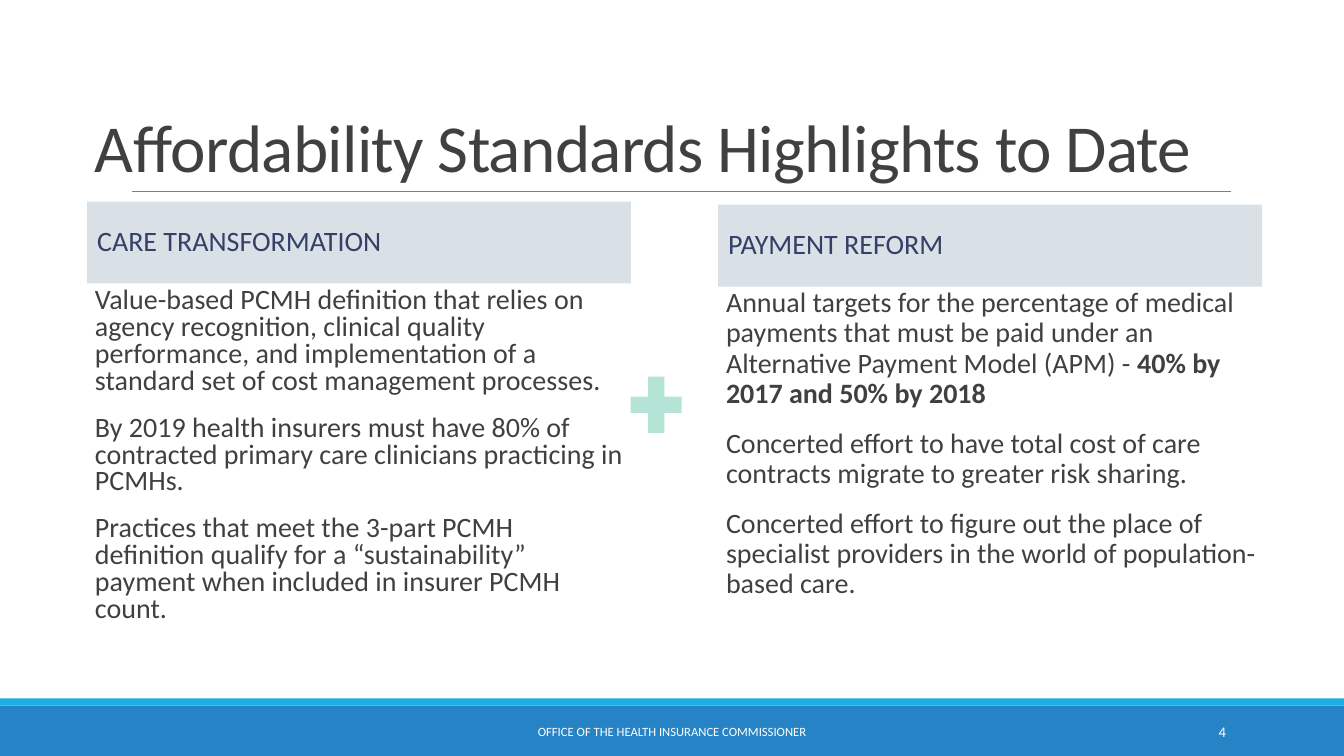
"""Build the slide on affordability standards: two headed columns joined by a plus."""
from dataclasses import dataclass

from lxml.etree import SubElement
from pptx import Presentation
from pptx.dml.color import RGBColor
from pptx.enum.shapes import MSO_CONNECTOR, MSO_SHAPE
from pptx.enum.text import MSO_ANCHOR, PP_ALIGN
from pptx.oxml.ns import qn
from pptx.shapes.autoshape import Shape
from pptx.slide import Slide
from pptx.util import Emu, Pt

PX = 9525
COLORS = {
    "footer": "2683C6", "strip": "1CADE4", "rule": "808080", "text": "404040",
    "heading": "344068", "heading_fill": "D9E0E6", "plus": "B3E4D6", "white": "FFFFFF",
}


@dataclass(frozen=True)
class Box:
    left: int
    top: int
    width: int
    height: int

    def emu(self) -> tuple[Emu, Emu, Emu, Emu]:
        return px(self.left), px(self.top), px(self.width), px(self.height)


@dataclass(frozen=True)
class Style:
    size: float
    color: str
    anchor: MSO_ANCHOR = MSO_ANCHOR.MIDDLE
    align: PP_ALIGN = PP_ALIGN.LEFT
    line: float = 1.0
    before: int = 0
    after: int = 0
    tracking: int = 0


@dataclass(frozen=True)
class Point:
    text: str
    emphasis: str = ""


@dataclass(frozen=True)
class Column:
    heading: str
    heading_box: Box
    points_box: Box
    line: float
    points: tuple[Point, ...]


COLUMNS = (
    Column("CARE TRANSFORMATION", Box(83, 192, 518, 78), Box(81, 270, 518, 345), 0.8, (
        Point("Value-based PCMH definition that relies on agency recognition, clinical quality "
              "performance, and implementation of a standard set of cost management processes."),
        Point("By 2019 health insurers must have 80% of contracted primary care clinicians "
              "practicing in PCMHs."),
        Point("Practices that meet the 3-part PCMH definition qualify for a “sustainability” "
              "payment when included in insurer PCMH count."),
    )),
    Column("PAYMENT REFORM", Box(684, 195, 518, 78), Box(682, 270, 518, 345), 0.9, (
        Point("Annual targets for the percentage of medical payments that must be paid under an "
              "Alternative Payment Model (APM) - ", "40% by 2017 and 50% by 2018"),
        Point("Concerted effort to have total cost of care contracts migrate to greater risk "
              "sharing."),
        Point("Concerted effort to figure out the place of specialist providers in the world of "
              "population-based care."),
    )),
)


def px(length: int) -> Emu:
    return Emu(length * PX)


def rgb(name: str) -> RGBColor:
    return RGBColor.from_string(COLORS[name])


def write(holder: Shape, points: tuple[Point, ...], style: Style) -> None:
    frame = holder.text_frame
    frame.word_wrap = True
    frame.vertical_anchor = style.anchor
    for index, point in enumerate(points):
        paragraph = frame.add_paragraph() if index else frame.paragraphs[0]
        paragraph.text = point.text
        if point.emphasis:
            emphasis = paragraph.add_run()
            emphasis.text = point.emphasis
            emphasis.font.bold = True
        paragraph.alignment = style.align
        paragraph.line_spacing = style.line
        paragraph.space_before = Pt(style.before)
        paragraph.space_after = Pt(style.after)
        for run in paragraph.runs:
            run.font.name = "Calibri"
            run.font.size = Pt(style.size)
            run.font.color.rgb = rgb(style.color)
            if style.tracking:
                run._r.get_or_add_rPr().set("spc", str(style.tracking))


def add_block(slide: Slide, box: Box, fill: str, kind: MSO_SHAPE = MSO_SHAPE.RECTANGLE) -> Shape:
    block = slide.shapes.add_shape(kind, *box.emu())
    block.shadow.inherit = False
    block.fill.solid()
    block.fill.fore_color.rgb = rgb(fill)
    block.line.fill.background()
    return block


def add_label(slide: Slide, box: Box, points: tuple[Point, ...], style: Style) -> Shape:
    label = slide.shapes.add_textbox(*box.emu())
    write(label, points, style)
    return label


def add_rule(slide: Slide, left: int, right: int, y: int) -> None:
    rule = slide.shapes.add_connector(MSO_CONNECTOR.STRAIGHT, px(left), px(y), px(right), px(y))
    rule.line.color.rgb = rgb("rule")
    rule.line.width = Pt(0.5)
    SubElement(rule._element.spPr, qn("a:effectLst"))


def add_column(slide: Slide, column: Column) -> None:
    heading = add_block(slide, column.heading_box, "heading_fill")
    write(heading, (Point(column.heading),),
          Style(20, "heading", line=0.9, before=12, after=2))
    details = add_label(slide, column.points_box, column.points,
                        Style(20, "text", MSO_ANCHOR.TOP, line=column.line, before=12, after=2))
    details.text_frame.margin_right = 0


def main() -> None:
    deck = Presentation()
    deck.slide_width, deck.slide_height = px(1280), px(720)
    slide = deck.slides.add_slide(deck.slide_layouts[6])
    add_block(slide, Box(0, 672, 1280, 48), "footer")
    add_block(slide, Box(0, 665, 1280, 7), "strip")
    add_rule(slide, 126, 1172, 182)
    add_label(slide, Box(81, 30, 1090, 152), (Point("Affordability Standards Highlights to Date"),),
              Style(48, "text", MSO_ANCHOR.BOTTOM, line=0.85, tracking=-50))
    for column in COLUMNS:
        add_column(slide, column)
    add_label(slide, Box(387, 678, 506, 38), (Point("OFFICE OF THE HEALTH INSURANCE COMMISSIONER"),),
              Style(9, "white", align=PP_ALIGN.CENTER))
    add_label(slide, Box(1040, 678, 137, 38), (Point("4"),),
              Style(10.5, "white", align=PP_ALIGN.RIGHT))
    add_block(slide, Box(592, 349, 66, 73), "plus", MSO_SHAPE.MATH_PLUS)
    deck.save("out.pptx")


if __name__ == "__main__":
    main()
